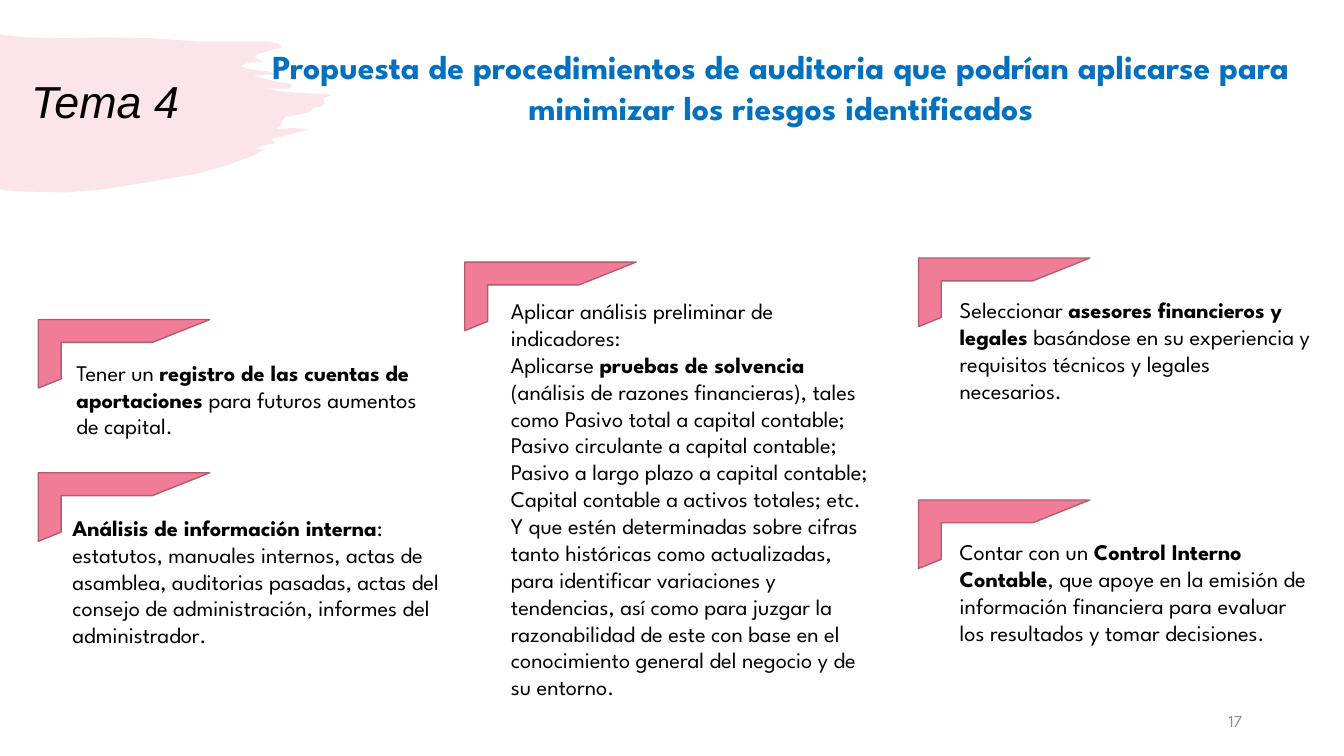
from pptx import Presentation
from pptx.dml.color import RGBColor
from pptx.enum.shapes import MSO_SHAPE
from pptx.enum.text import MSO_ANCHOR, MSO_AUTO_SIZE, PP_ALIGN
from pptx.util import Inches, Pt

PINK = RGBColor(0xF0, 0x7C, 0x98)
PALE_PINK = RGBColor(0xFC, 0xE5, 0xEA)
ROSE = RGBColor(0xB2, 0x5C, 0x70)
BLUE = RGBColor(0x00, 0x70, 0xC0)
GREY = RGBColor(0x8C, 0x8C, 0x8C)
BLACK = RGBColor(0x00, 0x00, 0x00)
HALF_FRAME = MSO_SHAPE.HALF_FRAME
TOP, MIDDLE = MSO_ANCHOR.TOP, MSO_ANCHOR.MIDDLE
LEFT, CENTER, RIGHT = PP_ALIGN.LEFT, PP_ALIGN.CENTER, PP_ALIGN.RIGHT
NO_FIT, GROW = MSO_AUTO_SIZE.NONE, MSO_AUTO_SIZE.SHAPE_TO_FIT_TEXT

# Grid, in inches
SLIDE_W, SLIDE_H = 13.33, 7.5
COL_1, COL_2, COL_3 = 0.38, 4.61, 9.11
CORNER_W, CORNER_H = 1.7, 0.68
LINE_H, PADDING = 0.27, 0.1

prs = Presentation()
prs.slide_width, prs.slide_height = Inches(SLIDE_W), Inches(SLIDE_H)
s = prs.slides.add_slide(prs.slide_layouts[5])


def paint(sp, fill, line=None):
    """Give sp a flat fill and a thin outline, or no outline."""
    sp.shadow.inherit = False
    sp.fill.solid()
    sp.fill.fore_color.rgb = fill
    if line is None:
        sp.line.fill.background()
    else:
        sp.line.color.rgb = line
        sp.line.width = Pt(1)


def write(box, *paragraphs, sp=None, size=16, font="League Spartan", color=BLACK,
          bold=False, italic=False, align=LEFT, anchor=TOP, spacing=None, fit=GROW):
    """Fill sp, or a new text box, at box; text between asterisks is bold."""
    sp = sp or s.shapes.add_textbox(0, 0, 0, 0)
    sp.left, sp.top, sp.width, sp.height = map(Inches, box)
    tf = sp.text_frame
    tf.word_wrap, tf.auto_size, tf.vertical_anchor = True, fit, anchor
    for i, text in enumerate(paragraphs):
        p = tf.add_paragraph() if i else tf.paragraphs[0]
        p.alignment, p.line_spacing = align, spacing
        for j, part in enumerate(text.split("*")):
            if part:
                r = p.add_run()
                r.text = part
                r.font.size, r.font.name = Pt(size), font
                r.font.bold, r.font.italic = bold or j % 2 == 1, italic
                r.font.color.rgb = color


# Brush stroke behind the topic title, in hundredths of an inch:
# along the top, down the ragged right end, back along the bottom
BRUSH_TOP = [
    (0, 34), (6, 35), (25, 37), (66, 38), (102, 37), (151, 38), (194, 41), (248, 41),
    (266, 41), (275, 43), (280, 47),
]
BRUSH_BRISTLES = [
    (271, 49), (255, 54), (253, 57), (256, 59), (262, 62), (247, 62), (238, 66),
    (246, 68), (256, 70), (266, 71), (275, 74), (263, 74), (251, 75), (263, 78),
    (273, 81), (280, 82), (288, 83), (290, 85), (287, 88), (284, 88), (263, 88),
    (280, 91), (296, 92), (330, 94), (321, 97), (322, 103), (318, 106), (311, 107),
    (307, 111), (300, 113), (283, 116), (280, 120), (278, 125), (274, 128), (291, 127),
    (308, 128), (289, 133), (269, 138), (273, 142), (262, 144), (252, 148), (263, 148),
]
BRUSH_BOTTOM = [
    (252, 154), (225, 164), (197, 172), (152, 180), (102, 188), (65, 191), (23, 190),
    (7, 189), (0, 188),
]
outline = BRUSH_TOP + BRUSH_BRISTLES + BRUSH_BOTTOM
builder = s.shapes.build_freeform(*outline[0], scale=Inches(1) / 100)
builder.add_line_segments(outline[1:], close=True)
brush = builder.convert_to_shape()
paint(brush, PALE_PINK)

title = s.shapes.title
title.element.addprevious(brush.element)
write((0.21, 0.57, 2.53, 0.92), "Tema 4", sp=title, size=32, font="Arial", italic=True,
      anchor=MIDDLE, spacing=0.9, fit=NO_FIT)
write((2.48, 0.41, 10.53, 0.91),
      "Propuesta de procedimientos de auditoria que podrían aplicarse para "
      "minimizar los riesgos identificados",
      size=24, color=BLUE, bold=True, align=CENTER)
write((9.42, 6.95, 3, 0.4), "17", size=12, color=GREY, align=RIGHT, anchor=MIDDLE,
      fit=NO_FIT)

# Each card: corner column and top, text shift from the corner,
# text width, height in lines, paragraphs
CARDS = [
    (COL_1, 3.17, (0.28, 0.34), 3.58, 3, [
        "Tener un *registro de las cuentas de aportaciones *para futuros aumentos "
        "de capital."]),
    (COL_1, 4.69, (0.24, 0.36), 3.93, 6, [
        "*Análisis de información interna*: estatutos, manuales internos, actas de "
        "asamblea, auditorias pasadas, actas del consejo de administración, informes "
        "del administrador."]),
    (COL_2, 2.6, (0.36, 0.3), 3.83, 17, [
        "Aplicar análisis preliminar de indicadores:",
        "Aplicarse *pruebas de solvencia *(análisis de razones financieras), tales como "
        "Pasivo total a capital contable; Pasivo circulante a capital contable; Pasivo a "
        "largo plazo a capital contable; Capital contable a activos totales; etc. Y que "
        "estén determinadas sobre cifras tanto históricas como actualizadas, para "
        "identificar variaciones y tendencias, así como para juzgar la razonabilidad de "
        "este con base en el conocimiento general del negocio y de su entorno."]),
    (COL_3, 2.56, (0.31, 0.33), 3.69, 4, [
        "Seleccionar *asesores financieros y legales* basándose en su experiencia y "
        "requisitos técnicos y legales necesarios."]),
    (COL_3, 4.96, (0.31, 0.33), 3.69, 5, [
        "Contar con un *Control Interno Contable*, que apoye en la emisión de "
        "información financiera para evaluar los resultados y tomar decisiones."]),
]
for col, top, (dx, dy), text_w, lines, paragraphs in CARDS:
    corner = s.shapes.add_shape(HALF_FRAME, *map(Inches, (col, top, CORNER_W, CORNER_H)))
    paint(corner, PINK, line=ROSE)
    write((col + dx, top + dy, text_w, PADDING + lines * LINE_H), *paragraphs)

prs.save("out.pptx")
